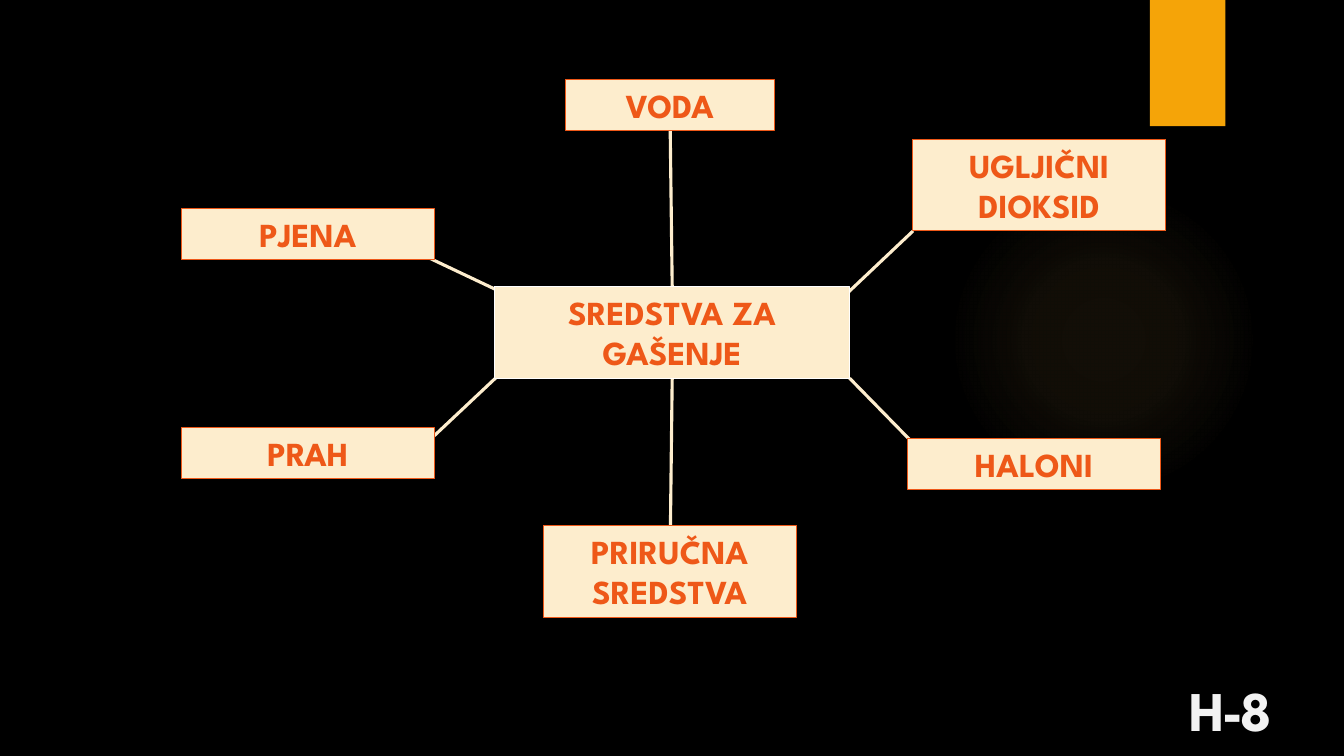
from lxml import etree
from pptx import Presentation
from pptx.dml.color import RGBColor
from pptx.enum.shapes import MSO_CONNECTOR, MSO_SHAPE
from pptx.enum.text import MSO_ANCHOR, MSO_AUTO_SIZE, PP_ALIGN
from pptx.oxml import parse_xml
from pptx.oxml.ns import qn
from pptx.util import Cm, Pt

RECTANGLE = MSO_SHAPE.RECTANGLE
OVAL = MSO_SHAPE.OVAL
STRAIGHT = MSO_CONNECTOR.STRAIGHT
MIDDLE = MSO_ANCHOR.MIDDLE
CENTER = PP_ALIGN.CENTER
FIT_SHAPE = MSO_AUTO_SIZE.SHAPE_TO_FIT_TEXT
FONT = "League Spartan"
COLORS = {
    "background": "000000",
    "glow": "FAC96A",
    "tab": "F5A408",
    "cream": "FDEDCD",
    "orange": "EE5818",
    "white": "FFFFFF",
    "label": "F2F2F2",
}


def add_filled_shape(kind, left, top, width, height, color):
    shape = slide.shapes.add_shape(kind, Cm(left), Cm(top), Cm(width), Cm(height))
    shape.shadow.inherit = False
    shape.fill.solid()
    shape.fill.fore_color.rgb = RGBColor.from_string(COLORS[color])
    shape.line.fill.background()
    return shape


def style_font(font, size, color):
    font.name = FONT
    font.size = Pt(size)
    font.bold = True
    font.color.rgb = RGBColor.from_string(COLORS[color])


presentation = Presentation()
presentation.slide_width = Cm(33.87)
presentation.slide_height = Cm(19.05)
slide = presentation.slides.add_slide(presentation.slide_layouts[6])
slide.background.fill.solid()
slide.background.fill.fore_color.rgb = RGBColor.from_string(COLORS["background"])

glow = add_filled_shape(OVAL, 23.9, 4.65, 7.82, 7.82, "glow")
stops = "".join(
    f'<a:gs pos="{position * 1000}"><a:srgbClr val="{COLORS["glow"]}">'
    f'<a:alpha val="{alpha * 1000}"/></a:srgbClr></a:gs>'
    for position, alpha in [(0, 7), (36, 6), (69, 0), (100, 0)]
)
gradient = parse_xml(
    '<a:gradFill xmlns:a="http://schemas.openxmlformats.org/drawingml/2006/main">'
    f'<a:gsLst>{stops}</a:gsLst><a:path path="circle">'
    '<a:fillToRect l="50000" t="50000" r="50000" b="50000"/></a:path></a:gradFill>'
)
solid_fill = glow._element.spPr.find(qn("a:solidFill"))
glow._element.spPr.replace(solid_fill, gradient)

add_filled_shape(RECTANGLE, 28.98, 0, 1.9, 3.18, "tab")

branches = [
    (10.39, 6.3, 13.18, 7.62),
    (16.89, 3.3, 16.94, 7.21),
    (16.94, 9.53, 16.89, 13.72),
    (12.73, 9.3, 10.87, 11.05),
    (21.41, 9.53, 23.22, 11.38),
    (23.01, 5.82, 21.16, 7.57),
]
for branch in branches:
    connector = slide.shapes.add_connector(STRAIGHT, *map(Cm, branch))
    connector.line.color.rgb = RGBColor.from_string(COLORS["cream"])
    connector.line.width = Pt(2.25)
    etree.SubElement(connector._element.spPr, qn("a:effectLst"))

one_line, two_lines = 1.28, 2.31
topics = [
    ("SREDSTVA ZA\nGAŠENJE", 12.47, 7.22, 8.94, two_lines, "white"),
    ("PJENA", 4.57, 5.26, 6.38, one_line, "orange"),
    ("VODA", 14.25, 2.01, 5.26, one_line, "orange"),
    ("PRAH", 4.57, 10.78, 6.38, one_line, "orange"),
    ("PRIRUČNA SREDSTVA", 13.69, 13.24, 6.38, two_lines, "orange"),
    ("HALONI", 22.87, 11.05, 6.38, one_line, "orange"),
    ("UGLJIČNI DIOKSID", 23, 3.51, 6.38, two_lines, "orange"),
]
for text, left, top, width, height, outline in topics:
    box = add_filled_shape(RECTANGLE, left, top, width, height, "cream")
    box.line.color.rgb = RGBColor.from_string(COLORS[outline])
    box.line.width = Pt(0.75)
    text_frame = box.text_frame
    text_frame.text = text
    text_frame.word_wrap = True
    text_frame.auto_size = FIT_SHAPE
    text_frame.vertical_anchor = MIDDLE
    for paragraph in text_frame.paragraphs:
        paragraph.alignment = CENTER
        style_font(paragraph.runs[0].font, 24, "orange")

label = slide.shapes.add_textbox(Cm(29.72), Cm(16.89), Cm(3.63), Cm(1.8))
label.text_frame.text = "H-8"
label.text_frame.word_wrap = False
label_run = label.text_frame.paragraphs[0].runs[0]
style_font(label_run.font, 40, "label")
label_run._r.get_or_add_rPr().set("spc", "-200")

presentation.save("out.pptx")
